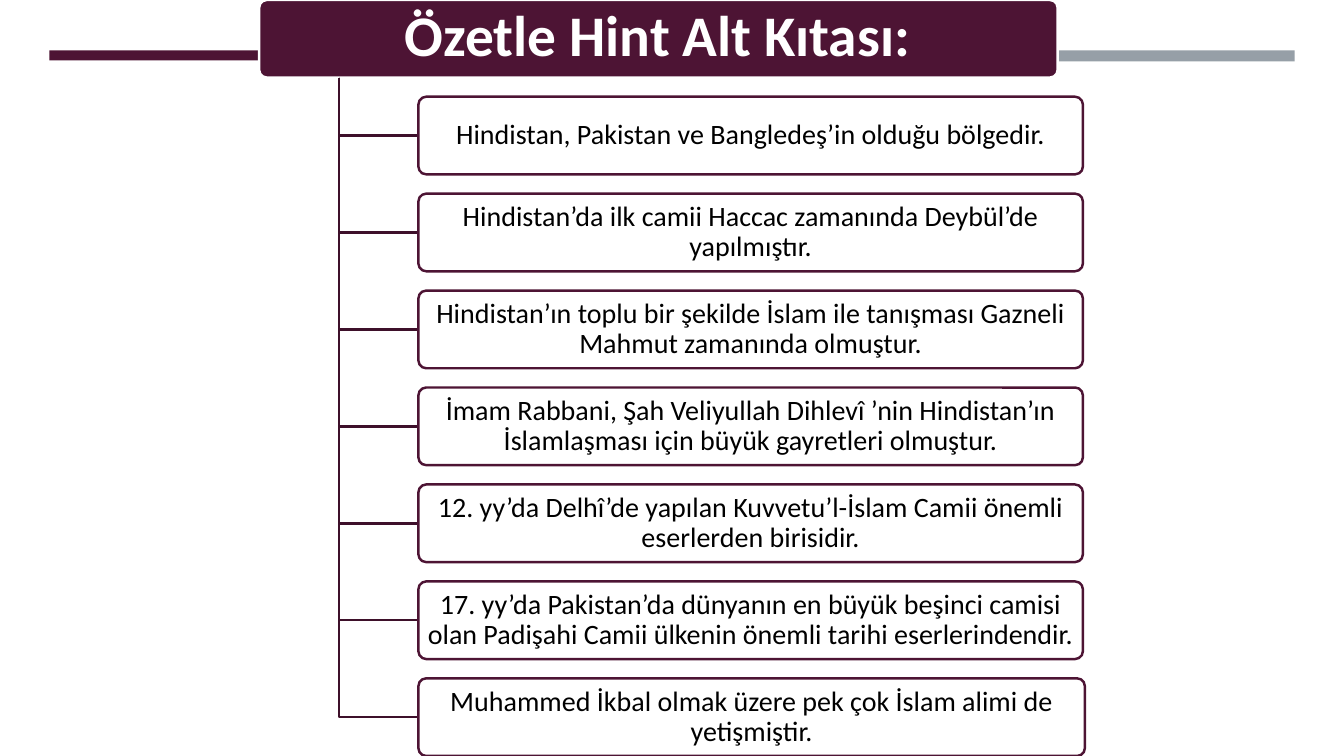
from lxml import etree
from pptx import Presentation
from pptx.dml.color import RGBColor
from pptx.enum.shapes import MSO_SHAPE
from pptx.enum.text import MSO_ANCHOR, MSO_AUTO_SIZE, PP_ALIGN
from pptx.oxml.ns import qn
from pptx.util import Inches, Pt

RECT = MSO_SHAPE.RECTANGLE
ROUND = MSO_SHAPE.ROUNDED_RECTANGLE
MIDDLE = MSO_ANCHOR.MIDDLE
CENTER = PP_ALIGN.CENTER
NO_FIT = MSO_AUTO_SIZE.NONE

COLORS = {
    "plum": "4D1434",
    "branch": "3E102A",
    "gray": "969FA7",
    "white": "FFFFFF",
    "black": "000000",
}
FACTS = [
    "Hindistan, Pakistan ve Bangledeş’in olduğu bölgedir.",
    "Hindistan’da ilk camii Haccac zamanında Deybül’de yapılmıştır.",
    "Hindistan’ın toplu bir şekilde İslam ile tanışması Gazneli Mahmut zamanında olmuştur.",
    "İmam Rabbani, Şah Veliyullah Dihlevî ’nin Hindistan’ın İslamlaşması için büyük gayretleri olmuştur.",
    "12. yy’da Delhî’de yapılan Kuvvetu’l-İslam Camii önemli eserlerden birisidir.",
    "17. yy’da Pakistan’da dünyanın en büyük beşinci camisi olan Padişahi Camii ülkenin önemli tarihi eserlerindendir.",
    "Muhammed İkbal olmak üzere pek çok İslam alimi de yetişmiştir.",
]
TRUNK = 3.36
LEFT = 4.15
HIGH = 0.77
FIRST = 0.96
LAST = 6.73
STEP = (LAST - FIRST) / (len(FACTS) - 1)


def color(name):
    return RGBColor.from_string(COLORS[name])


def outline(shape, name):
    shape.line.color.rgb = color(name)
    shape.line.width = Pt(1.75)


def write(shape, text, size=20, ink="black", bold=False, pad=(0.04, 0.03)):
    frame = shape.text_frame
    frame.word_wrap = True
    frame.auto_size = NO_FIT
    frame.vertical_anchor = MIDDLE
    frame.margin_left = frame.margin_right = Inches(pad[0])
    frame.margin_top = frame.margin_bottom = Inches(pad[1])
    para = frame.paragraphs[0]
    para.alignment = CENTER
    para.line_spacing = 0.9
    run = para.add_run()
    run.text = text
    run.font.name = "Calibri"
    run.font.size = Pt(size)
    run.font.bold = bold
    run.font.color.rgb = color(ink)


def box(slide, kind, area, fill, line=None):
    shape = slide.shapes.add_shape(kind, *map(Inches, area))
    shape.shadow.inherit = False
    shape.fill.solid()
    shape.fill.fore_color.rgb = color(fill)
    if kind == ROUND:
        shape.adjustments[0] = 0.1
    if line:
        outline(shape, line)
    else:
        shape.line.fill.background()
    return shape


def fade(shape, percent):
    tint = shape.element.spPr.find(qn("a:solidFill"))[0]
    etree.SubElement(tint, qn("a:alpha")).set("val", str(percent * 1000))


def branch(slide, mid):
    start = Inches(TRUNK), Inches(HIGH)
    path = slide.shapes.build_freeform(*start, scale=1.0)
    path.add_line_segments(
        [(Inches(TRUNK), Inches(mid)), (Inches(LEFT), Inches(mid))], close=False
    )
    shape = path.convert_to_shape()
    shape.shadow.inherit = False
    shape.fill.background()
    outline(shape, "branch")


def header(slide):
    box(slide, RECT, (0.49, 0.5, 4.05, 0.1), "plum")
    box(slide, RECT, (8.79, 0.5, 4.05, 0.11), "gray")
    box(slide, ROUND, (2.57, 0, 7.92, HIGH), "plum", "white")
    title = slide.shapes.title
    title.left, title.top = Inches(2.59), Inches(0.02)
    title.width, title.height = Inches(7.87), Inches(0.72)
    write(title, "Özetle Hint Alt Kıtası:", size=41, ink="white", bold=True,
          pad=(0.09, 0.06))
    title.element.getparent().append(title.element)


def main():
    deck = Presentation()
    deck.slide_width = Inches(13.33)
    deck.slide_height = Inches(7.5)
    slide = deck.slides.add_slide(deck.slide_layouts[5])
    header(slide)
    for row, fact in enumerate(FACTS):
        top = FIRST + row * STEP
        wide = 6.61 if fact == FACTS[-1] else 6.59
        branch(slide, top + HIGH / 2)
        card = box(slide, ROUND, (LEFT, top, wide, HIGH), "white", "plum")
        fade(card, 90)
        write(card, fact)
    deck.save("out.pptx")


if __name__ == "__main__":
    main()
